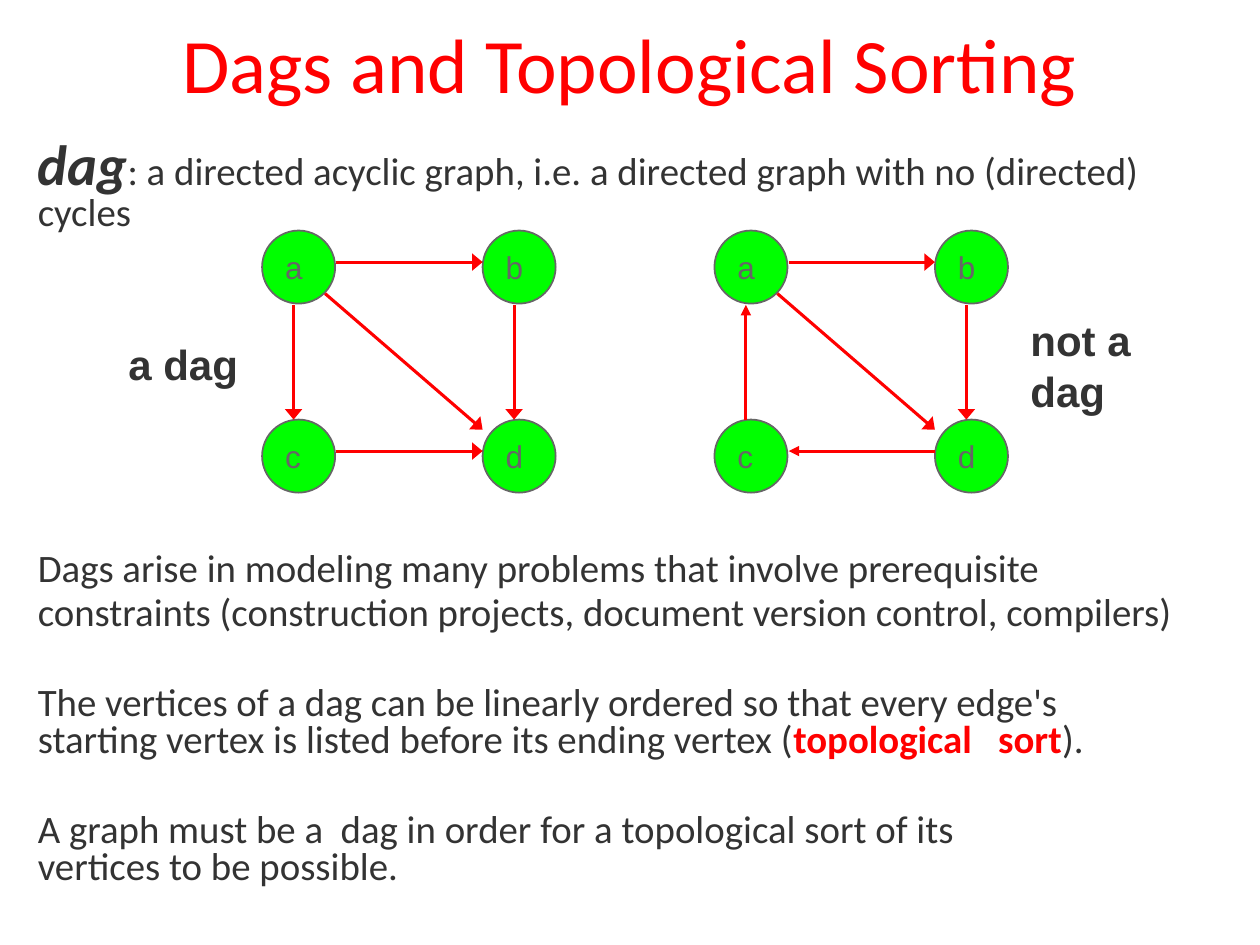
from dataclasses import dataclass

from lxml.etree import SubElement
from pptx import Presentation
from pptx.dml.color import RGBColor
from pptx.enum.shapes import MSO_CONNECTOR, MSO_SHAPE
from pptx.enum.text import MSO_ANCHOR, PP_ALIGN
from pptx.oxml.ns import qn
from pptx.util import Inches, Pt


@dataclass(frozen=True)
class Theme:
    red: RGBColor = RGBColor(0xFF, 0x00, 0x00)
    green: RGBColor = RGBColor(0x00, 0xFF, 0x00)
    ink: RGBColor = RGBColor(0x33, 0x33, 0x33)
    gray: RGBColor = RGBColor(0x66, 0x66, 0x66)
    sans: str = "Calibri"
    label: str = "Arial"
    title: float = 44
    term: float = 32.4
    body: float = 22.2
    note: float = 24
    node: float = 18


THEME = Theme()
NODE = 0.58
NODES = {"a": (0, 0), "b": (1.75, 0), "c": (0, 1.5), "d": (1.75, 1.5)}
EDGES = {
    "ab": (0.59, 0.25, 1.75, 0.25),
    "ac": (0.25, 0.59, 0.25, 1.5),
    "cd": (0.59, 1.75, 1.75, 1.75),
    "bd": (2, 0.59, 2, 1.5),
    "ad": (0.5, 0.5, 1.75, 1.58),
}

# Space before each paragraph, then its spans: text, style
BODY = [
    (0, [("dag", "term"),
         (": a directed acyclic graph, i.e. a directed graph with no (directed) cycles", "")]),
    (182, [("Dags arise in modeling many problems that involve prerequisite", "")]),
    (4, [("constraints (construction projects, document version control, compilers)", "")]),
    (30, [("The vertices of a dag can be linearly ordered so that every edge's\v"
           "starting vertex is listed before its ending vertex (", ""),
          ("topological   sort", "key"), (").", "")]),
    (30, [("A graph must be a  dag in order for a topological sort of its\v"
           "vertices to be possible.", "")]),
]


def style(run, face, size, color, bold=False, italic=False):
    font = run.font
    font.name, font.size, font.color.rgb = face, Pt(size), color
    font.bold, font.italic = bold, italic


def add_title(slide, left, top, width, height):
    title = slide.shapes.title
    title.left, title.top = Inches(left), Inches(top)
    title.width, title.height = Inches(width), Inches(height)
    frame = title.text_frame
    frame.text = "Dags and Topological Sorting"
    frame.vertical_anchor = MSO_ANCHOR.MIDDLE
    para = frame.paragraphs[0]
    para.alignment = PP_ALIGN.CENTER
    style(para.runs[0], THEME.sans, THEME.title, THEME.red)


def add_span(para, text, kind):
    """Add styled text, with a line break at each vertical tab."""
    for i, line in enumerate(text.split("\v")):
        if i:
            para.add_line_break()
        run = para.add_run()
        run.text = line
        style(run, THEME.sans,
              THEME.term if kind == "term" else THEME.body,
              THEME.red if kind == "key" else THEME.ink,
              bold=kind != "", italic=kind == "term")


def add_body(slide, left, top, width, height):
    box = slide.shapes.add_textbox(Inches(left), Inches(top), Inches(width), Inches(height))
    frame = box.text_frame
    frame.word_wrap = True
    frame.margin_left = frame.margin_top = Inches(0.05)
    frame.margin_right = frame.margin_bottom = Inches(0.02)
    for i, (gap, spans) in enumerate(BODY):
        para = frame.add_paragraph() if i else frame.paragraphs[0]
        para.line_spacing = 0.8
        para.space_before = Pt(gap)
        for text, kind in spans:
            add_span(para, text, kind)


def add_node(slide, left, top, name):
    node = slide.shapes.add_shape(
        MSO_SHAPE.OVAL, Inches(left), Inches(top), Inches(NODE), Inches(NODE))
    node.shadow.inherit = False
    node.fill.solid()
    node.fill.fore_color.rgb = THEME.green
    node.line.color.rgb = THEME.gray
    node.line.width = Pt(1)
    frame = node.text_frame
    frame.text = name
    frame.word_wrap = False
    frame.vertical_anchor = MSO_ANCHOR.MIDDLE
    para = frame.paragraphs[0]
    para.alignment = PP_ALIGN.LEFT
    style(para.runs[0], THEME.label, THEME.node, THEME.gray)


def add_edge(slide, x1, y1, x2, y2, head):
    edge = slide.shapes.add_connector(
        MSO_CONNECTOR.STRAIGHT, Inches(x1), Inches(y1), Inches(x2), Inches(y2))
    edge.line.color.rgb = THEME.red
    edge.line.width = Pt(1.75)
    SubElement(edge.line._get_or_add_ln(), qn("a:tailEnd"), type="triangle", w=head, len="med")
    SubElement(edge._element.spPr, qn("a:effectLst"))


def add_graph(slide, left, top, flipped=()):
    """Draw the four nodes and five edges, turning the flipped edges round."""
    for name, (x, y) in NODES.items():
        add_node(slide, left + x, top + y, name)
    for name, (x1, y1, x2, y2) in EDGES.items():
        start, end = (left + x1, top + y1), (left + x2, top + y2)
        if name in flipped:
            add_edge(slide, *end, *start, "med")
        else:
            add_edge(slide, *start, *end, "lg")


def add_note(slide, left, top, width, height, text):
    box = slide.shapes.add_textbox(Inches(left), Inches(top), Inches(width), Inches(height))
    frame = box.text_frame
    frame.word_wrap = True
    frame.text = text
    style(frame.paragraphs[0].runs[0], THEME.label, THEME.note, THEME.ink, bold=True)


def main():
    deck = Presentation()
    deck.slide_width, deck.slide_height = Inches(10), Inches(7.5)
    slide = deck.slides.add_slide(deck.slide_layouts.get_by_name("Title Only"))
    add_title(slide, 0.5, 0, 9, 1)
    add_body(slide, 0.25, 1.08, 9.58, 5.92)
    add_graph(slide, 2.08, 1.83)
    add_graph(slide, 5.67, 1.83, flipped=("ac", "cd"))
    add_note(slide, 0.92, 2.64, 1.08, 0.52, "a dag")
    add_note(slide, 8.08, 2.45, 1.67, 0.91, "not a dag")
    deck.save("out.pptx")


if __name__ == "__main__":
    main()
